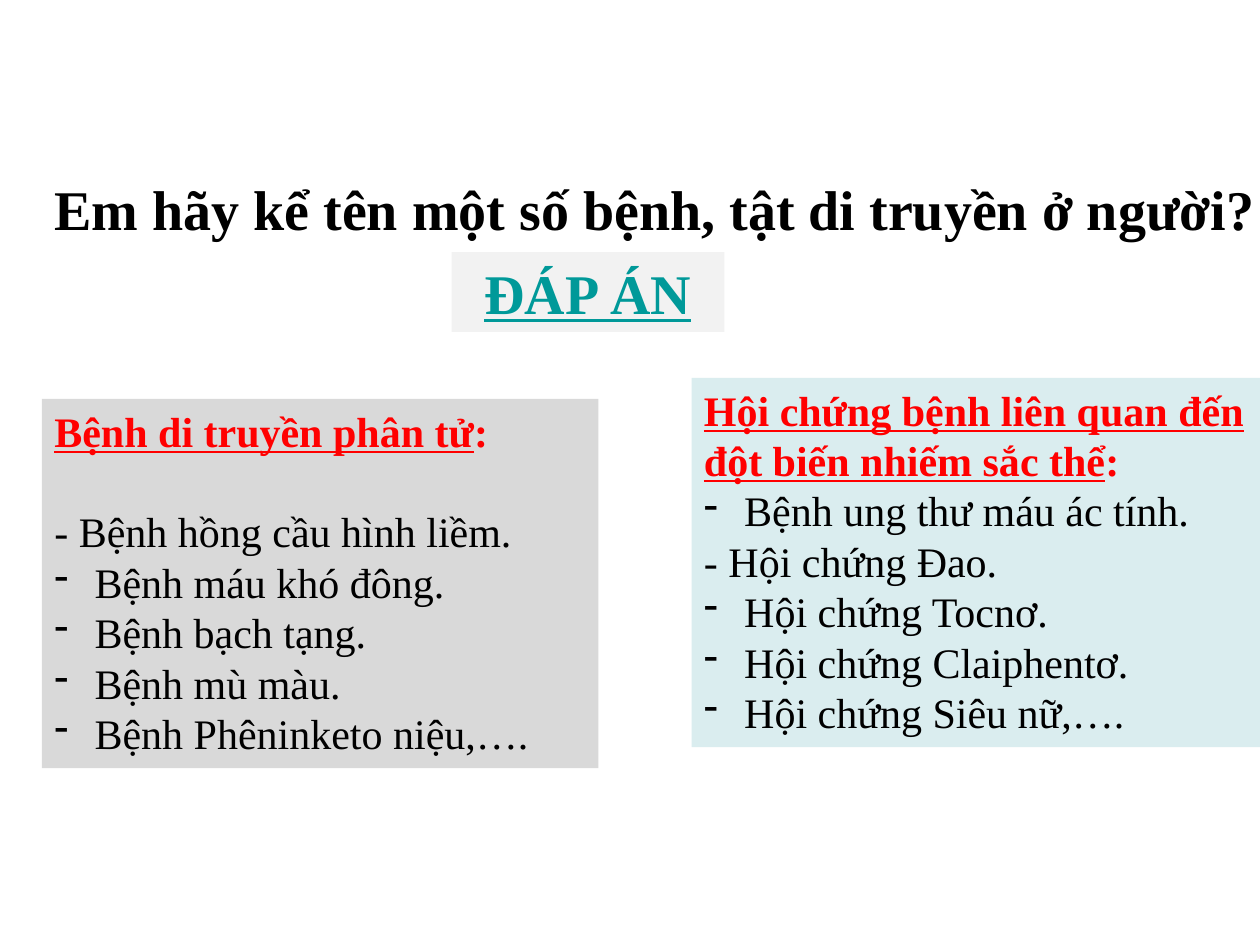
from dataclasses import dataclass

from lxml import etree
from pptx import Presentation
from pptx.dml.color import RGBColor
from pptx.enum.shapes import MSO_SHAPE
from pptx.enum.text import MSO_ANCHOR, PP_ALIGN
from pptx.oxml.ns import qn
from pptx.util import Pt

RECTANGLE = MSO_SHAPE.RECTANGLE
TOP = MSO_ANCHOR.TOP
LEFT, CENTER = PP_ALIGN.LEFT, PP_ALIGN.CENTER


@dataclass(frozen=True)
class Theme:
    """Colours, font and sizes of the slide."""
    font: str = "Times New Roman"
    ink: str = "000000"
    heading: str = "FF0000"
    answer: str = "009999"
    answer_fill: str = "F2F2F2"
    molecular_fill: str = "D9D9D9"
    chromosome_fill: str = "DAEDEF"
    title_size: int = 32
    body_size: int = 24
    hang: int = 23
    line: float = 28.8


THEME = Theme()


def add_span(para, text, size, color, bold=False, underline=False):
    """Append one styled run to a paragraph."""
    span = para.add_run()
    span.text = text
    span.font.name = THEME.font
    span.font.size = Pt(size)
    span.font.bold = bold
    span.font.underline = underline
    span.font.color.rgb = RGBColor.from_string(color)


def add_dash(para):
    """Give a paragraph a hanging dash bullet."""
    props = para._p.get_or_add_pPr()
    props.set("marL", str(Pt(THEME.hang)))
    props.set("indent", str(-Pt(THEME.hang)))
    etree.SubElement(props, qn("a:buFontTx"))
    etree.SubElement(props, qn("a:buChar"), char="-")


def add_panel(page, box, fill):
    """Draw a filled rectangle and return its text frame."""
    panel = page.shapes.add_shape(RECTANGLE, *map(Pt, box))
    panel.shadow.inherit = False
    panel.fill.solid()
    panel.fill.fore_color.rgb = RGBColor.from_string(fill)
    panel.line.fill.background()
    frame = panel.text_frame
    frame.word_wrap = True
    frame.vertical_anchor = TOP
    return frame


def add_question(page, box, text):
    """Write the question line."""
    frame = page.shapes.add_textbox(*map(Pt, box)).text_frame
    frame.word_wrap = True
    add_span(frame.paragraphs[0], text, THEME.title_size, THEME.ink, bold=True)


def add_answer_label(page, box, text):
    """Draw the centred answer label."""
    para = add_panel(page, box, THEME.answer_fill).paragraphs[0]
    para.alignment = CENTER
    add_span(para, text, THEME.title_size, THEME.answer, True, True)


def add_disease_list(page, box, fill, heading, items, gap=0):
    """Draw a panel with an underlined heading and (text, bulleted) items."""
    frame = add_panel(page, box, fill)
    para = frame.paragraphs[0]
    para.alignment = LEFT
    add_span(para, heading, THEME.body_size, THEME.heading, True, True)
    add_span(para, ":", THEME.body_size, THEME.heading, True)
    for index, (text, bulleted) in enumerate(items):
        para = frame.add_paragraph()
        para.alignment = LEFT
        if index == 0:
            para.space_before = Pt(gap)
        if bulleted:
            add_dash(para)
        add_span(para, text, THEME.body_size, THEME.ink)


def main():
    """Build and save the slide."""
    deck = Presentation()
    deck.slide_width, deck.slide_height = Pt(720), Pt(540)
    page = deck.slides.add_slide(deck.slide_layouts[6])
    add_question(page, (24, 96, 714, 45.6),
                 "Em hãy kể tên một số bệnh, tật di truyền ở người?")
    add_answer_label(page, (258, 144, 156, 45.6), "ĐÁP ÁN")
    add_disease_list(
        page, (24, 228, 318, 211), THEME.molecular_fill,
        "Bệnh di truyền phân tử",
        [("- Bệnh hồng cầu hình liềm.", False),
         ("Bệnh máu khó đông.", True),
         ("Bệnh bạch tạng.", True),
         ("Bệnh mù màu.", True),
         ("Bệnh Phêninketo niệu,….", True)],
        gap=THEME.line)
    add_disease_list(
        page, (395.2, 216, 324.8, 211), THEME.chromosome_fill,
        "Hội chứng bệnh liên quan đến đột biến nhiếm sắc thể",
        [("Bệnh ung thư máu ác tính.", True),
         ("- Hội chứng Đao.", False),
         ("Hội chứng Tocnơ.", True),
         ("Hội chứng Claiphentơ.", True),
         ("Hội chứng Siêu nữ,….", True)])
    deck.save("out.pptx")


if __name__ == "__main__":
    main()
